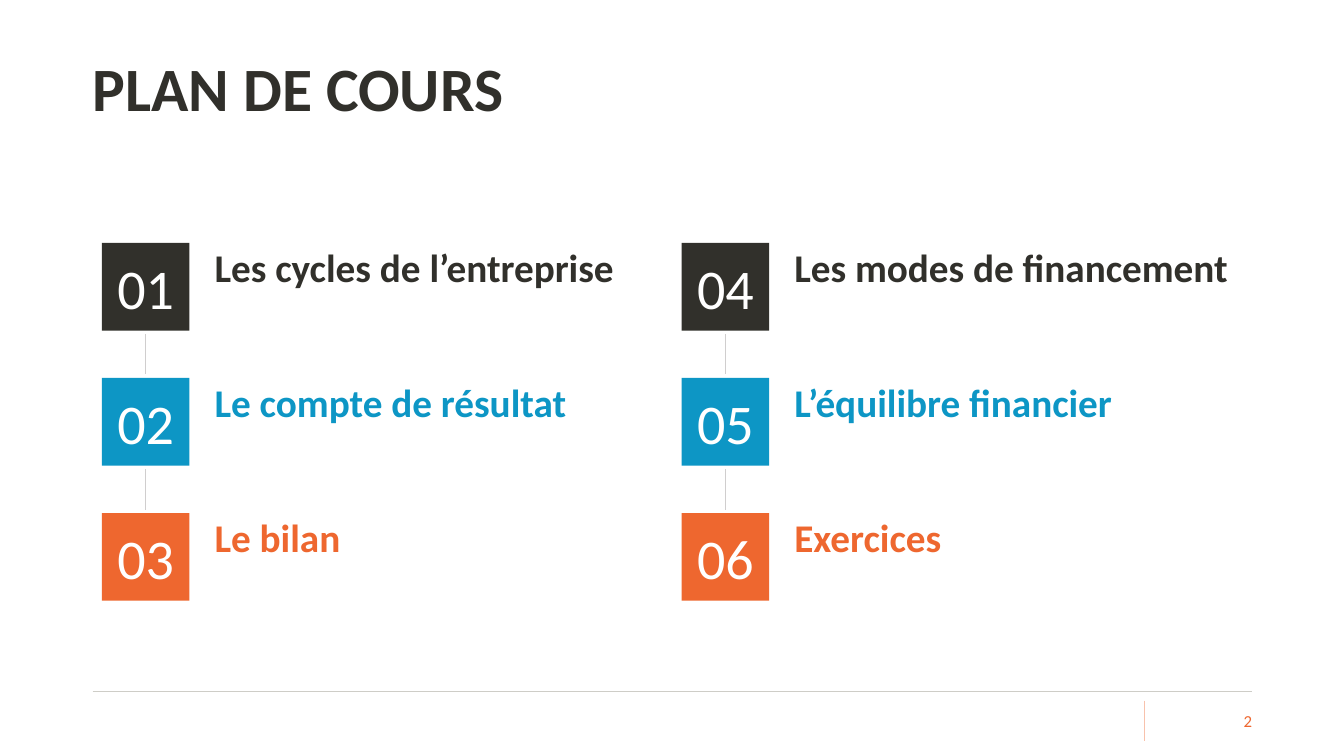
from lxml.etree import SubElement
from pptx import Presentation
from pptx.dml.color import RGBColor
from pptx.enum.shapes import MSO_CONNECTOR as Connector, MSO_SHAPE as Shape
from pptx.enum.text import MSO_ANCHOR as Anchor, MSO_AUTO_SIZE as AutoSize, PP_ALIGN as Align
from pptx.oxml.ns import qn
from pptx.util import Inches, Pt

COLORS = {
    "dark": "31302B", "blue": "0D96C5", "orange": "EE672F", "white": "FFFFFF",
    "rule": "CECDC7", "tick": "F8C2AC", "link": "D0CECE",
}
CHAPTERS = [
    "Les cycles de l’entreprise", "Le compte de résultat", "Le bilan",
    "Les modes de financement", "L’équilibre financier", "Exercices",
]
ROW_COLORS = ["dark", "blue", "orange"]

# Chapter grid, in inches
GRID_LEFT, GRID_TOP = 1.01, 2.41
COLUMN_STEP, ROW_STEP = 5.75, 1.34
BADGE, LABEL_OFFSET, LINK_GAP = 0.87, 1.02, 0.035


def rgb(name):
    return RGBColor.from_string(COLORS[name])


def write(shape, text, *, size, color, bold=False, align=Align.LEFT,
          anchor=Anchor.TOP, insets=(0.1, 0.05, 0.1, 0.05), spacing=None):
    frame = shape.text_frame
    frame.word_wrap = True
    frame.auto_size = AutoSize.NONE
    frame.vertical_anchor = anchor
    (frame.margin_left, frame.margin_top,
     frame.margin_right, frame.margin_bottom) = map(Inches, insets)
    paragraph = frame.paragraphs[0]
    paragraph.alignment = align
    if spacing:
        paragraph.line_spacing = spacing
    run = paragraph.add_run()
    run.text = text
    font = run.font
    font.name, font.size, font.bold = "Calibri", Pt(size), bold
    font.color.rgb = rgb(color)


class CoursePlan:
    def __init__(self, presentation):
        self.slide = presentation.slides.add_slide(presentation.slide_layouts[5])
        self.shapes = self.slide.shapes

    def title(self, text, left, top, width, height):
        shape = self.shapes.title
        shape.left, shape.top = Inches(left), Inches(top)
        shape.width, shape.height = Inches(width), Inches(height)
        write(shape, text, size=44, color="dark", bold=True, anchor=Anchor.MIDDLE,
              insets=(0, 0.05, 0.1, 0.05), spacing=0.9)

    def text(self, text, left, top, width, height, **style):
        box = self.shapes.add_textbox(*map(Inches, (left, top, width, height)))
        write(box, text, **style)

    def line(self, x1, y1, x2, y2, color):
        line = self.shapes.add_connector(
            Connector.STRAIGHT, *map(Inches, (x1, y1, x2, y2)))
        line.line.color.rgb = rgb(color)
        line.line.width = Pt(0.5)
        SubElement(line._element.spPr, qn("a:effectLst"))

    def badge(self, text, left, top, color):
        square = self.shapes.add_shape(
            Shape.RECTANGLE, *map(Inches, (left, top, BADGE, BADGE)))
        square.shadow.inherit = False
        square.fill.solid()
        square.fill.fore_color.rgb = rgb(color)
        square.line.fill.background()
        write(square, text, size=40, color="white", align=Align.CENTER,
              anchor=Anchor.MIDDLE)

    def chapter(self, index, text):
        column, row = divmod(index, len(ROW_COLORS))
        left = GRID_LEFT + column * COLUMN_STEP
        top = GRID_TOP + row * ROW_STEP
        color = ROW_COLORS[row]
        self.text(text, left + LABEL_OFFSET, top, 4.61, 0.47, size=28,
                  color=color, bold=True, insets=(0.1, 0, 0.1, 0))
        self.badge(f"{index + 1:02}", left, top, color)
        if row < len(ROW_COLORS) - 1:
            middle = left + BADGE / 2
            self.line(middle, top + BADGE + LINK_GAP,
                      middle, top + ROW_STEP - LINK_GAP, "link")


def main():
    presentation = Presentation()
    presentation.slide_width, presentation.slide_height = Inches(13.33), Inches(7.5)
    plan = CoursePlan(presentation)

    # Footer rules
    plan.line(0.92, 6.86, 12.42, 6.86, "rule")
    plan.line(11.35, 6.95, 11.35, 7.35, "tick")

    # Numbered chapters
    for index, chapter in enumerate(CHAPTERS):
        plan.chapter(index, chapter)

    # Title and page number
    plan.title("PLAN DE COURS", 0.92, 0.18, 10.47, 1.45)
    plan.text("2", 11.47, 6.95, 0.95, 0.4, size=12, color="orange",
              align=Align.RIGHT, anchor=Anchor.MIDDLE, insets=(0, 0.05, 0, 0.05))

    presentation.save("out.pptx")


if __name__ == "__main__":
    main()
